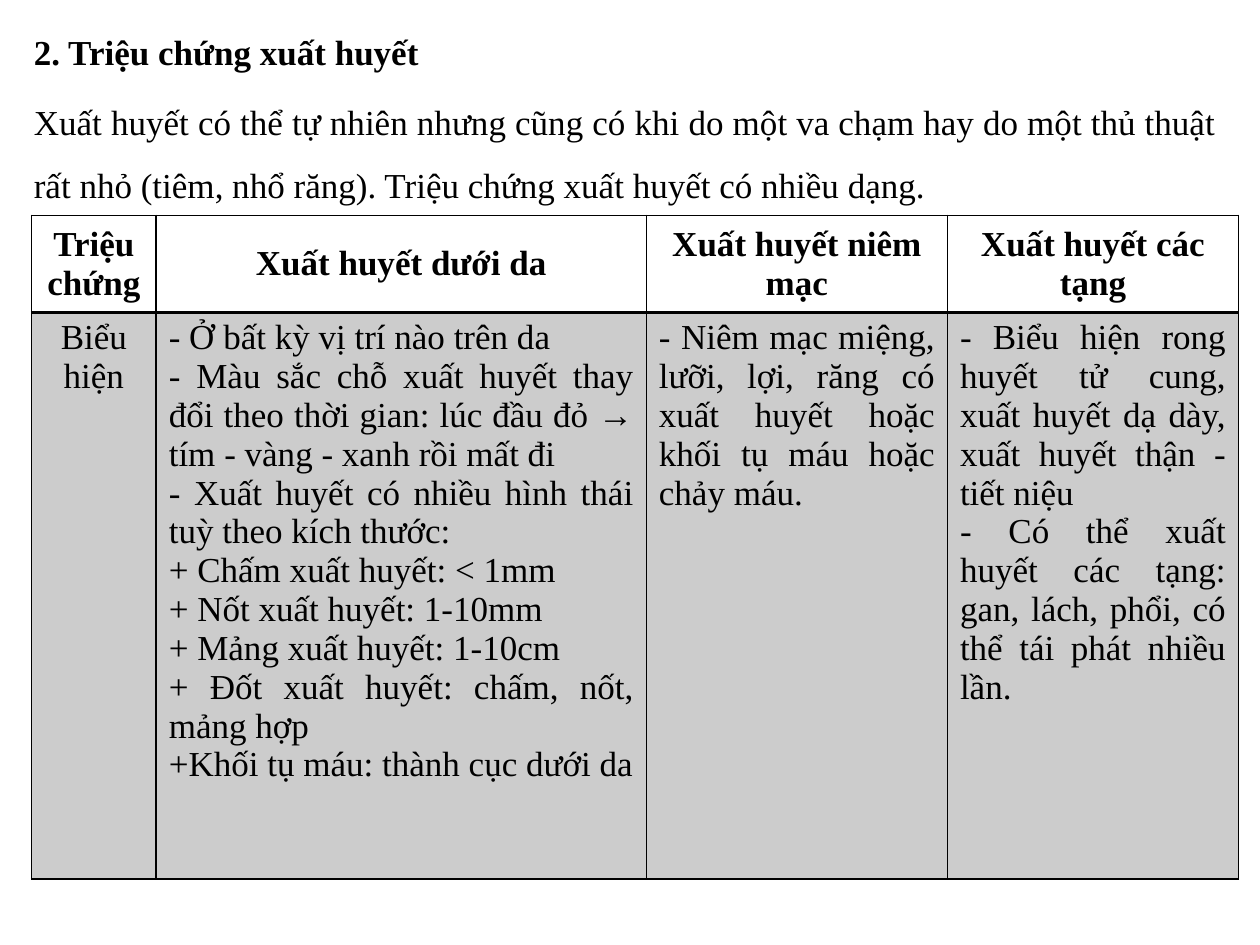
from lxml import etree
from pptx import Presentation
from pptx.dml.color import RGBColor
from pptx.enum.text import MSO_ANCHOR, PP_ALIGN
from pptx.oxml.ns import qn
from pptx.util import Inches, Pt

CENTER, JUSTIFY = PP_ALIGN.CENTER, PP_ALIGN.JUSTIFY
TOP, MIDDLE = MSO_ANCHOR.TOP, MSO_ANCHOR.MIDDLE
BLACK = RGBColor(0, 0, 0)
FONT = {"name": "Times New Roman", "size": Pt(20)}

TITLE = "2. Triệu chứng xuất huyết"
INTRO = ("Xuất huyết có thể tự nhiên nhưng cũng có khi do một va chạm hay do một thủ thuật "
         "rất nhỏ (tiêm, nhổ răng). Triệu chứng xuất huyết có nhiều dạng.")
HEADERS = ["Triệu chứng", "Xuất huyết dưới da", "Xuất huyết niêm mạc", "Xuất huyết các tạng"]
SYMPTOMS = [
    ["Biểu hiện"],
    [
        "- Ở bất kỳ vị trí nào trên da",
        "- Màu sắc chỗ xuất huyết thay đổi theo thời gian: lúc đầu đỏ → tím - vàng - xanh rồi mất đi",
        "- Xuất huyết có nhiều hình thái tuỳ theo kích thước:",
        "+ Chấm xuất huyết: < 1mm",
        "+ Nốt xuất huyết: 1-10mm",
        "+ Mảng xuất huyết: 1-10cm",
        "+ Đốt xuất huyết: chấm, nốt, mảng hợp",
        "+Khối tụ máu: thành cục dưới da",
    ],
    ["- Niêm mạc miệng, lưỡi, lợi, răng có xuất huyết hoặc khối tụ máu hoặc chảy máu."],
    [
        "- Biểu hiện rong huyết tử cung, xuất huyết dạ dày, xuất huyết thận - tiết niệu",
        "- Có thể xuất huyết các tạng: gan, lách, phổi, có thể tái phát nhiều lần.",
    ],
]
COLUMN_WIDTHS = [0.99, 3.89, 2.39, 2.31]
ROW_HEIGHTS = [0.75, 4.5]
HEADER_BORDERS = {"L": 1, "R": 1, "T": 1, "B": 2}
BODY_BORDERS = {"L": 1, "R": 1, "T": 2, "B": 1}


def write(frame, lines, alignment, bold=False):
    for index, line in enumerate(lines):
        paragraph = frame.paragraphs[0] if index == 0 else frame.add_paragraph()
        paragraph.alignment = alignment
        run = paragraph.add_run()
        run.text = line
        for name, value in {**FONT, "bold": bold}.items():
            setattr(run.font, name, value)
        run.font.color.rgb = BLACK


def add_borders(cell, borders):
    properties = cell._tc.get_or_add_tcPr()
    for side, width in borders.items():
        line = etree.SubElement(properties, qn(f"a:ln{side}"), w=str(Pt(width)))
        fill = etree.SubElement(line, qn("a:solidFill"))
        etree.SubElement(fill, qn("a:srgbClr"), val=str(BLACK))


def shade(cell, percent):
    cell.fill.solid()
    cell.fill.fore_color.rgb = BLACK
    color = cell._tc.tcPr.find(qn("a:solidFill")).find(qn("a:srgbClr"))
    etree.SubElement(color, qn("a:alpha"), val=str(percent * 1000))


def add_intro(slide):
    box = slide.shapes.add_textbox(Inches(0.17), Inches(0.03), Inches(9.58), Inches(7.25))
    frame = box.text_frame
    frame.word_wrap = True
    write(frame, [TITLE, INTRO], JUSTIFY)
    heading, body = frame.paragraphs
    heading.runs[0].font.bold = True
    body.space_before = Pt(4)
    for paragraph in frame.paragraphs:
        paragraph.line_spacing = 1.5


def add_symptom_table(slide):
    table = slide.shapes.add_table(
        len(ROW_HEIGHTS), len(COLUMN_WIDTHS), Inches(0.25), Inches(1.71),
        Inches(sum(COLUMN_WIDTHS)), Inches(sum(ROW_HEIGHTS))).table
    table.first_row = table.horz_banding = False
    for row, height in zip(table.rows, ROW_HEIGHTS):
        row.height = Inches(height)
    for index, width in enumerate(COLUMN_WIDTHS):
        table.columns[index].width = Inches(width)

        header = table.cell(0, index)
        header.vertical_anchor = MIDDLE
        write(header.text_frame, [HEADERS[index]], CENTER, bold=True)
        add_borders(header, HEADER_BORDERS)
        header.fill.background()

        body = table.cell(1, index)
        body.vertical_anchor = TOP
        write(body.text_frame, SYMPTOMS[index], CENTER if index == 0 else JUSTIFY)
        add_borders(body, BODY_BORDERS)
        shade(body, 20)


def main():
    presentation = Presentation()
    presentation.slide_width, presentation.slide_height = Inches(10), Inches(7.5)
    slide = presentation.slides.add_slide(presentation.slide_layouts[6])
    add_intro(slide)
    add_symptom_table(slide)
    presentation.save("out.pptx")


if __name__ == "__main__":
    main()
